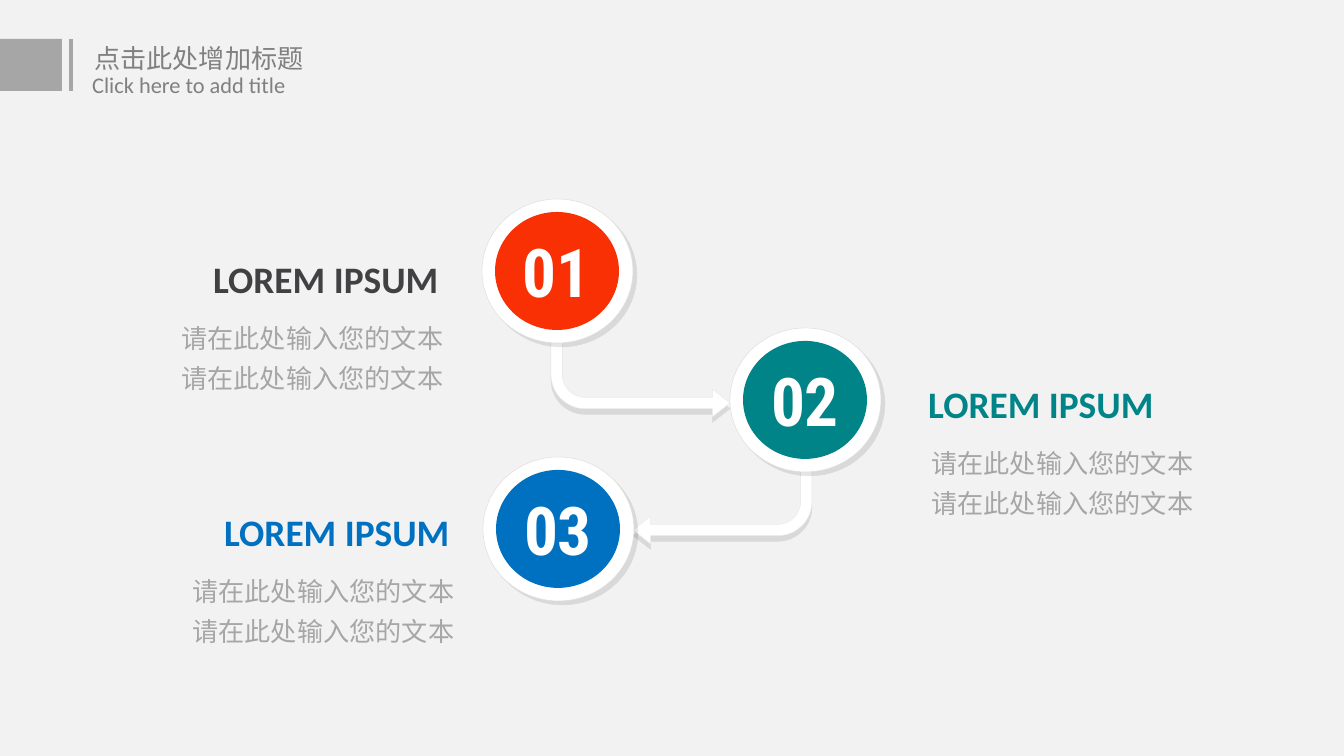
from lxml import etree
from pptx import Presentation
from pptx import util as u
from pptx.dml.color import RGBColor
from pptx.enum import shapes, text
from pptx.oxml.ns import qn

SCALE = 914400 / 134.4
WHITE, GRAY, BODY_GRAY = "FFFFFF", "808080", "A6A6A6"
LATIN, CHINESE, NUMERAL = "Calibri", "Noto Sans CJK SC", "Roboto Condensed"
LEFT, CENTER, RIGHT = text.PP_ALIGN.LEFT, text.PP_ALIGN.CENTER, text.PP_ALIGN.RIGHT
MIDDLE, TOP = text.MSO_ANCHOR.MIDDLE, text.MSO_ANCHOR.TOP
BODY = ["请在此处输入您的文本"] * 2


def px(*lengths):
    return [u.Emu(round(length * SCALE)) for length in lengths]


def color(target, hex_value):
    target.rgb = RGBColor.from_string(hex_value)


def add_shadow(shape, direction):
    effects = shape._element.spPr.find(qn("a:effectLst"))
    shadow = etree.SubElement(effects, qn("a:outerShdw"), blurRad="0", dist=str(u.Pt(3)),
                              dir=str(direction * 60000), algn="ctr", rotWithShape="0")
    black = etree.SubElement(shadow, qn("a:srgbClr"), val="000000")
    etree.SubElement(black, qn("a:alpha"), val="10000")


def add_filled(parent, kind, box, fill, outline=None, shadow=None):
    shape = parent.shapes.add_shape(kind, *px(*box))
    shape.shadow.inherit = False
    shape.fill.solid()
    color(shape.fill.fore_color, fill)
    if outline:
        color(shape.line.color, outline)
        shape.line.width = u.Pt(0.25)
    else:
        shape.line.fill.background()
    if shadow is not None:
        add_shadow(shape, shadow)
    return shape


def write(shape, lines, size, font, ink, align=LEFT, bold=False, spacing=None,
          anchor=MIDDLE, wrap=True):
    frame = shape.text_frame
    frame.word_wrap = wrap
    frame.vertical_anchor = anchor
    for index, line in enumerate(lines):
        paragraph = frame.add_paragraph() if index else frame.paragraphs[0]
        paragraph.alignment = align
        paragraph.line_spacing = spacing
        run = paragraph.add_run()
        run.text = line
        run.font.size = u.Pt(size)
        run.font.bold = bold
        run.font.name = font
        color(run.font.color, ink)
        etree.SubElement(run._r.get_or_add_rPr(), qn("a:ea"), typeface=font)


def add_text(parent, box, lines, size, font, ink, **options):
    write(parent.shapes.add_textbox(*px(*box)), lines, size, font, ink, **options)


def add_bent_arrow(slide, left, top, mirrored):
    arrow = add_filled(slide, shapes.MSO_SHAPE.BENT_ARROW, (left, top, 179, 78),
                       WHITE, "EAEAEA", 90)
    for index, value in enumerate((0.146, 0.178, 0.226, 0.438)):
        arrow.adjustments[index] = value
    transform = arrow._element.spPr.find(qn("a:xfrm"))
    transform.set("flipV", "1")
    if mirrored:
        transform.set("flipH", "1")


def add_badge(slide, left, top, number, fill):
    group = slide.shapes.add_group_shape()
    oval = shapes.MSO_SHAPE.OVAL
    add_filled(group, oval, (left, top, 151, 144), WHITE, "DDDDDD", 45)
    disc = add_filled(group, oval, (left + 13, top + 13, 124, 118), fill)
    frame = disc.text_frame
    frame.margin_left = frame.margin_right = frame.margin_top = frame.margin_bottom = 0
    write(disc, [number], 36, NUMERAL, WHITE, align=CENTER, bold=True)


def add_caption(slide, left, top, ink, align):
    group = slide.shapes.add_group_shape()
    body_left = left + (75 if align == RIGHT else -32)
    add_text(group, (left, top, 394, 60), ["LOREM IPSUM"], 20, LATIN, ink,
             align=align, bold=True, wrap=False)
    add_text(group, (body_left, top + 57, 359, 190), BODY, 14, CHINESE, BODY_GRAY,
             align=CENTER, spacing=1.3, anchor=TOP)


def add_header(slide, left, top):
    group = slide.shapes.add_group_shape()
    add_filled(group, shapes.MSO_SHAPE.RECTANGLE, (left, top, 62, 52), BODY_GRAY)
    rule = group.shapes.add_connector(shapes.MSO_CONNECTOR.STRAIGHT,
                                      *px(left + 71, top, left + 71, top + 52))
    color(rule.line.color, BODY_GRAY)
    rule.line.width = u.Pt(2.25)
    etree.SubElement(rule._element.spPr, qn("a:effectLst"))
    add_text(group, (left + 81, top - 8, 253, 48), ["点击此处增加标题"], 14, CHINESE, GRAY,
             spacing=1.2)
    add_text(group, (left + 79, top + 21, 253, 44), ["Click here to add title"], 12, LATIN,
             GRAY, spacing=1.2)


def main():
    presentation = Presentation()
    presentation.slide_width, presentation.slide_height = px(1344, 756)
    slide = presentation.slides.add_slide(presentation.slide_layouts[6])
    slide.background.fill.solid()
    color(slide.background.fill.fore_color, "F2F2F2")

    add_bent_arrow(slide, 633, 466, True)
    add_bent_arrow(slide, 551, 339, False)
    add_badge(slide, 730, 328, "02", "008487")
    add_badge(slide, 482, 199, "01", "F83003")
    add_badge(slide, 483, 457, "03", "0070C0")
    add_caption(slide, 58, 249, "414042", RIGHT)
    add_caption(slide, 69, 502, "0070C0", RIGHT)
    add_caption(slide, 915, 374, "008487", LEFT)
    add_header(slide, 0, 39)
    presentation.save("out.pptx")


if __name__ == "__main__":
    main()
